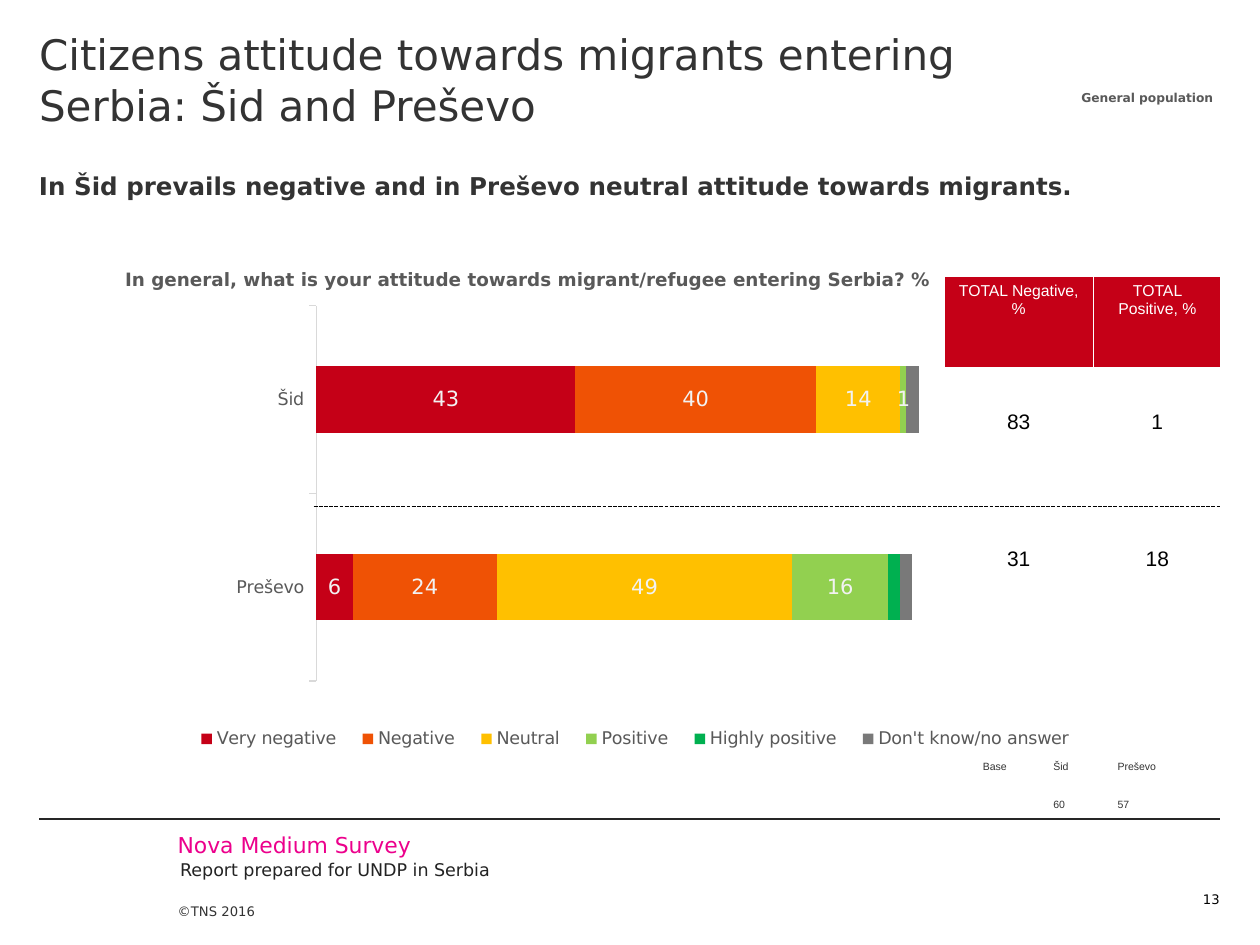
"""Build the slide on attitudes towards migrants in Šid and Preševo."""
from dataclasses import dataclass

from lxml.etree import SubElement
from pptx import Presentation
from pptx.chart.data import CategoryChartData
from pptx.dml.color import RGBColor
from pptx.enum.chart import XL_CHART_TYPE, XL_LEGEND_POSITION, XL_TICK_MARK
from pptx.enum.dml import MSO_LINE
from pptx.enum.shapes import MSO_CONNECTOR
from pptx.enum.text import MSO_ANCHOR, MSO_AUTO_SIZE, PP_ALIGN
from pptx.oxml.ns import qn
from pptx.util import Inches, Pt


@dataclass(frozen=True)
class Theme:
    font: str = "DejaVu Sans"
    table_font: str = "Arial"
    dark: str = "333333"
    grey: str = "595959"
    footer: str = "232323"
    rule: str = "262626"
    axis: str = "D9D9D9"
    label: str = "F2F2F2"
    black: str = "000000"
    white: str = "FFFFFF"
    red: str = "C50017"
    pink: str = "EC008C"
    title_size: float = 24
    subtitle_size: float = 14
    brand_size: float = 12.5
    value_size: float = 12
    question_size: float = 10.5
    body_size: float = 10
    header_size: float = 9
    small_size: float = 7.5
    tag_size: float = 7
    base_size: float = 6


theme = Theme()


def write(frame, text, size, color, font=theme.font, bold=False,
          align=PP_ALIGN.LEFT, anchor=MSO_ANCHOR.TOP, insets=(0, 0, 0, 0), wrap=True):
    """Fill a text frame or table cell with one formatted paragraph."""
    frame.margin_left, frame.margin_top, frame.margin_right, frame.margin_bottom = map(Inches, insets)
    frame.vertical_anchor = anchor
    frame.word_wrap = wrap
    paragraph = getattr(frame, "text_frame", frame).paragraphs[0]
    paragraph.alignment = align
    run = paragraph.add_run()
    run.text = text
    run.font.name = font
    run.font.size = Pt(size)
    run.font.bold = bold
    run.font.color.rgb = RGBColor.from_string(color)


def place(element, index, **settings):
    """Give a chart part a manual layout."""
    for old_layout in element.findall(qn("c:layout")):
        element.remove(old_layout)
    layout = SubElement(element, qn("c:layout"))
    element.insert(index, layout)
    manual = SubElement(layout, qn("c:manualLayout"))
    for name, value in settings.items():
        SubElement(manual, qn(f"c:{name}")).set("val", str(value))


presentation = Presentation()
presentation.slide_width = Inches(10)
presentation.slide_height = Inches(7.5)
slide = presentation.slides.add_slide(presentation.slide_layouts[5])

title = slide.shapes.title
title.left, title.top, title.width, title.height = map(Inches, (0.31, 0, 8.21, 1.13))
title.text_frame.auto_size = MSO_AUTO_SIZE.NONE
write(title.text_frame, "Citizens attitude towards migrants entering Serbia: Šid and Preševo",
      theme.title_size, theme.dark, insets=(0, 0.23, 0, 0))

text_boxes = [
    ((0.31, 1.13, 9.37, 0.83),
     "In Šid prevails negative and in Preševo neutral attitude towards migrants.",
     dict(size=theme.subtitle_size, color=theme.dark, bold=True, insets=(0, 0.23, 0, 0))),
    ((8.48, 0.67, 1.25, 0.22), "General population",
     dict(size=theme.tag_size, color=theme.grey, bold=True, align=PP_ALIGN.CENTER,
          insets=(0.1, 0.05, 0.1, 0.05), wrap=False)),
    ((1.41, 6.6, 3.31, 0.21), "Nova Medium Survey",
     dict(size=theme.brand_size, color=theme.pink)),
    ((1.43, 6.82, 6.81, 0.17), "Report prepared for UNDP in Serbia",
     dict(size=theme.body_size, color=theme.footer)),
    ((1.41, 6.92, 0.83, 0.58), "©TNS 2016",
     dict(size=theme.small_size, color=theme.dark, anchor=MSO_ANCHOR.BOTTOM,
          insets=(0, 0, 0, 0.29))),
    ((9.13, 6.92, 0.55, 0.28), "13",
     dict(size=theme.small_size, color=theme.black, align=PP_ALIGN.RIGHT,
          anchor=MSO_ANCHOR.BOTTOM)),
]
for box, text, text_format in text_boxes:
    shape = slide.shapes.add_textbox(*map(Inches, box))
    write(shape.text_frame, text, **text_format)

series_rows = [
    ("Very negative", (43, 6), theme.red),
    ("Negative", (40, 24), "EF5205"),
    ("Neutral", (14, 49), "FFC000"),
    ("Positive", (1, 16), "92D050"),
    ("Highly positive", (0, 2), "00B050"),
    ("Don't know/no answer", (2, 2), "797979"),
]
labelled_series = 4
chart_data = CategoryChartData(number_format="0")
chart_data.categories = ["Šid", "Preševo"]
for name, values, color in series_rows:
    chart_data.add_series(name, values)
chart = slide.shapes.add_chart(
    XL_CHART_TYPE.BAR_STACKED, *map(Inches, (0.31, 1.96, 9.37, 4.54)), chart_data).chart
chart.font.name = theme.font
chart.font.size = Pt(theme.body_size)
chart.font.color.rgb = RGBColor.from_string(theme.grey)

chart.has_title = True
question = chart.chart_title.text_frame.paragraphs[0].add_run()
question.text = "In general, what is your attitude towards migrant/refugee entering Serbia? %"
question.font.name = theme.font
question.font.size = Pt(theme.question_size)
question.font.bold = True
question.font.color.rgb = RGBColor.from_string(theme.grey)

chart.has_legend = True
chart.legend.position = XL_LEGEND_POSITION.BOTTOM
chart.legend.include_in_layout = False

category_axis = chart.category_axis
category_axis.reverse_order = True
category_axis.major_tick_mark = XL_TICK_MARK.OUTSIDE
category_axis.format.line.color.rgb = RGBColor.from_string(theme.axis)
category_axis.format.line.width = Pt(0.75)
value_axis = chart.value_axis
value_axis.minimum_scale = 0
value_axis.maximum_scale = 100
value_axis.has_major_gridlines = False
value_axis.visible = False

plot = chart.plots[0]
plot.gap_width = 182
plot.overlap = 100
plot.vary_by_categories = False
for position, (series, (name, values, color)) in enumerate(zip(plot.series, series_rows)):
    series.format.fill.solid()
    series.format.fill.fore_color.rgb = RGBColor.from_string(color)
    if position < labelled_series:
        labels = series.data_labels
        labels.show_value = True
        labels.number_format = "0"
        labels.number_format_is_linked = False
        labels.font.name = theme.font
        labels.font.size = Pt(theme.value_size)
        labels.font.color.rgb = RGBColor.from_string(theme.label)

chart_element = chart.element.find(qn("c:chart"))
place(chart_element.find(qn("c:title")), 1, xMode="edge", yMode="edge", x=0.07, y=0.03)
place(chart_element.find(qn("c:plotArea")), 0, layoutTarget="inner",
      xMode="edge", yMode="edge", x=0.235, y=0.103, w=0.51, h=0.656)
place(chart_element.find(qn("c:legend")), 1, xMode="edge", yMode="edge",
      x=0.12, y=0.83, w=0.77, h=0.06)

header = dict(size=theme.header_size, color=theme.white, font=theme.table_font,
              align=PP_ALIGN.CENTER, insets=(0.1, 0.05, 0.1, 0.05))
total = dict(header, size=theme.value_size, color=theme.black, anchor=MSO_ANCHOR.MIDDLE)
base = dict(total, size=theme.base_size, color=theme.dark, align=PP_ALIGN.LEFT)
tables = [
    ((7.49, 2.19), (1.19, 1.01), (0.73, 0.86, 1.31),
     [("TOTAL Negative, %", "TOTAL Positive, %"), ("83", "1"), ("31", "18")],
     [header, total, total], [theme.red, theme.white, theme.white]),
    ((7.7, 5.99), (0.56, 0.51, 0.56), (0.18, 0.26),
     [("Base", "Šid", "Preševo"), ("", "60", "57")],
     [base, base], [None, None]),
]
for (left, top), widths, heights, rows, formats, fills in tables:
    table = slide.shapes.add_table(
        len(rows), len(widths), Inches(left), Inches(top),
        Inches(sum(widths)), Inches(sum(heights))).table
    table.first_row = False
    table.horz_banding = False
    for column, width in zip(table.columns, widths):
        column.width = Inches(width)
    for row, height, texts, text_format, fill in zip(table.rows, heights, rows, formats, fills):
        row.height = Inches(height)
        for cell, text in zip(row.cells, texts):
            write(cell, text, **text_format)
            if fill:
                cell.fill.solid()
                cell.fill.fore_color.rgb = RGBColor.from_string(fill)
            else:
                cell.fill.background()

rules = [(0.31, 6.5, theme.rule, MSO_LINE.SOLID), (2.49, 4.02, theme.black, MSO_LINE.SQUARE_DOT)]
for left, top, color, dash in rules:
    rule = slide.shapes.add_connector(
        MSO_CONNECTOR.STRAIGHT, Inches(left), Inches(top), Inches(9.68), Inches(top))
    rule.line.color.rgb = RGBColor.from_string(color)
    rule.line.width = Pt(0.75)
    rule.line.dash_style = dash
    SubElement(rule.element.spPr, qn("a:effectLst"))

presentation.save("out.pptx")
